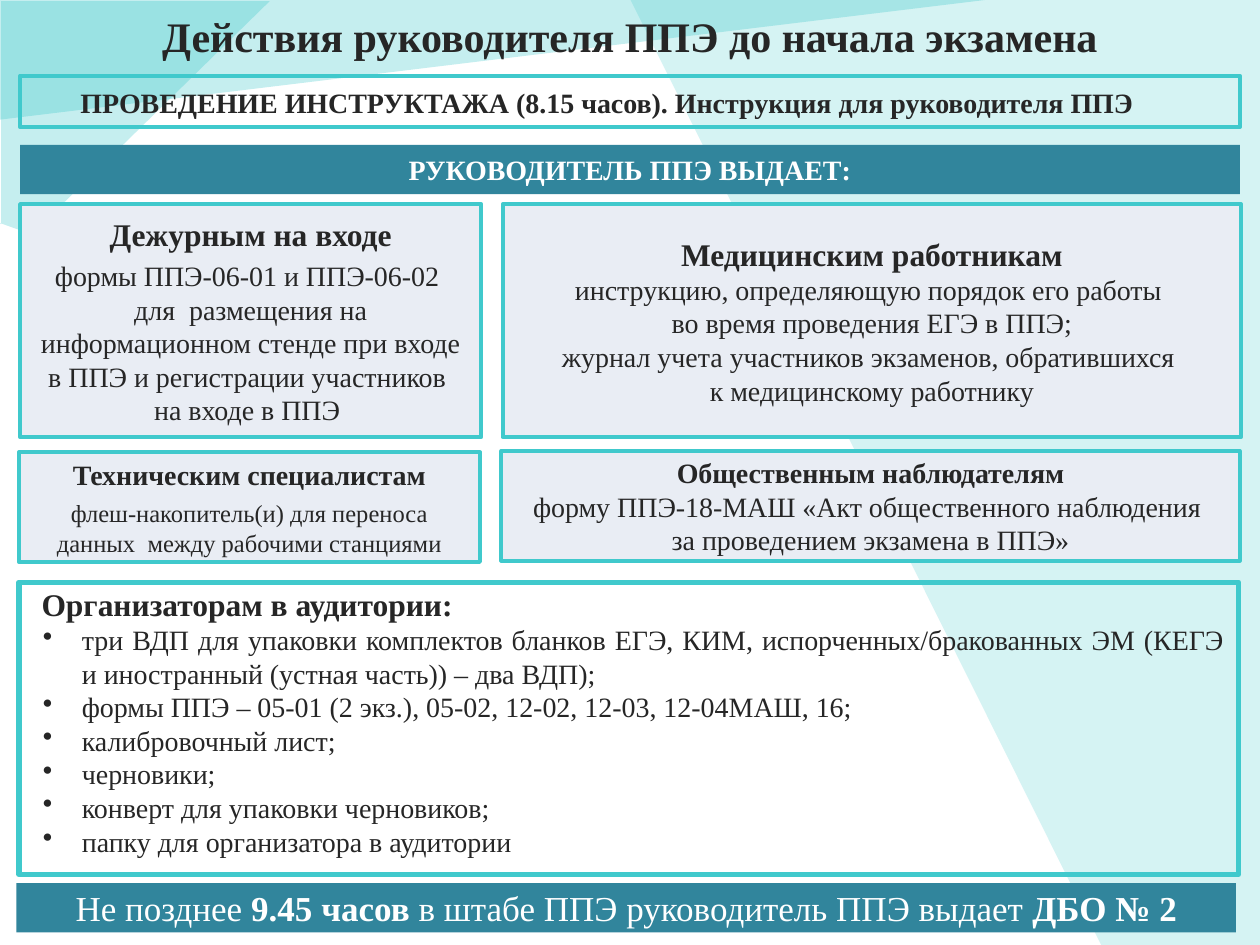
from copy import deepcopy
from lxml.etree import SubElement
from pptx import Presentation
from pptx.dml.color import RGBColor
from pptx.enum.shapes import MSO_SHAPE
from pptx.enum.text import MSO_ANCHOR, MSO_AUTO_SIZE, PP_ALIGN
from pptx.oxml.ns import qn
from pptx.util import Pt

PX = 9144
FONT = "Times New Roman"
INK, WHITE = "262626", "FFFFFF"
TEAL, AQUA, MIST, BAR = "20C0C4", "40C9CC", "E9EDF4", "31859C"


def px(*nums):
    return [n * PX for n in nums]


def paint(color, code):
    color.rgb = RGBColor.from_string(code)


def say(frame, text, size=16, bold=False, color=INK, align=PP_ALIGN.CENTER,
        before=0, left=0, hang=0, bullet=False):
    para = frame.paragraphs[0]
    if para.runs:
        para = frame.add_paragraph()
    para.alignment = align
    para.space_before = Pt(before)
    props = para._p.get_or_add_pPr()
    props.set("marL", str(left * PX))
    props.set("indent", str(hang * PX))
    if bullet:
        SubElement(props, qn("a:buChar")).set("char", "•")
    else:
        SubElement(props, qn("a:buNone"))
    for turn, part in enumerate(text.split("**")):
        for row, line in enumerate(part.split("\n")):
            if row:
                para.add_line_break()
            if line:
                run = para.add_run()
                run.text = line
                run.font.name = FONT
                run.font.size = Pt(size)
                run.font.bold = bold or turn % 2 == 1
                paint(run.font.color, color)
    for gap in para._p.findall(qn("a:br")):
        gap.append(deepcopy(para.runs[0]._r.rPr))


def facet(slide, alpha, points):
    pen = slide.shapes.build_freeform(*points[0], scale=PX)
    pen.add_line_segments(points[1:], close=True)
    shape = pen.convert_to_shape()
    shape.shadow.inherit = False
    shape.fill.solid()
    paint(shape.fill.fore_color, TEAL)
    tint = shape.fill._xPr.find(".//" + qn("a:srgbClr"))
    SubElement(tint, qn("a:alpha")).set("val", str(alpha * 1000))
    shape.line.fill.background()


def box(slide, place, fill=None, line=None, width=2.25):
    shape = slide.shapes.add_shape(MSO_SHAPE.RECTANGLE, *px(*place))
    shape.shadow.inherit = False
    if fill:
        shape.fill.solid()
        paint(shape.fill.fore_color, fill)
    else:
        shape.fill.background()
    if line:
        paint(shape.line.color, line)
        shape.line.width = Pt(width)
    else:
        shape.line.fill.background()
    frame = shape.text_frame
    frame.word_wrap = True
    frame.vertical_anchor = MSO_ANCHOR.MIDDLE
    return frame


def bar(slide, place, text, **form):
    say(box(slide, place, BAR), text, color=WHITE, before=3.9, **form)


def card(slide, place, head, body, size=18, small=16, before=(0, 0)):
    frame = box(slide, place, MIST, AQUA)
    say(frame, head, size=size, bold=True, before=before[0])
    for text in body:
        say(frame, text, size=small, before=before[1])


def label(slide, place):
    frame = slide.shapes.add_textbox(*px(*place)).text_frame
    frame.word_wrap = True
    frame.auto_size = MSO_AUTO_SIZE.SHAPE_TO_FIT_TEXT
    return frame


def title(slide, place, text):
    shape = slide.shapes.title
    shape.left, shape.top, shape.width, shape.height = px(*place)
    frame = shape.text_frame
    frame.vertical_anchor = MSO_ANCHOR.MIDDLE
    frame.auto_size = MSO_AUTO_SIZE.NONE
    say(frame, text, size=24, bold=True)
    slide.shapes.element.append(shape.element)


def rooms(slide):
    box(slide, (15, 462, 968, 232), line=AQUA, width=3)
    frame = label(slide, (32, 462, 940, 220))
    frame.vertical_anchor = MSO_ANCHOR.MIDDLE
    frame.margin_left = frame.margin_right = frame.margin_bottom = 0
    frame.margin_top = PX
    say(frame, "Организаторам в аудитории:", size=18, bold=True,
        align=PP_ALIGN.JUSTIFY, left=1)
    for item in (
        "три ВДП для упаковки комплектов бланков ЕГЭ, КИМ, "
        "испорченных/бракованных ЭМ (КЕГЭ и иностранный (устная часть)) – два ВДП);",
        "формы ППЭ – 05-01 (2 экз.), 05-02, 12-02, 12-03, 12-04МАШ, 16;",
        "калибровочный лист;",
        "черновики;",
        "конверт для упаковки черновиков;",
        "папку для организатора в аудитории",
    ):
        say(frame, item, align=PP_ALIGN.JUSTIFY, left=33, hang=-31, bullet=True)


def main():
    deck = Presentation()
    deck.slide_width, deck.slide_height = px(1000, 750)
    slide = deck.slides.add_slide(deck.slide_layouts[5])

    facet(slide, 19, [(1004, 750), (874, 750), (500, -1), (1004, -1)])
    facet(slide, 26, [(782, 0), (0, 95), (0, -1)])
    facet(slide, 26, [(0, 177), (25, 186), (214, 1), (1, 1), (1, 178)])
    title(slide, (10, -19, 980, 95), "Действия руководителя ППЭ до начала экзамена")
    rooms(slide)

    bar(slide, (16, 115, 968, 39), "РУКОВОДИТЕЛЬ ППЭ ВЫДАЕТ:", bold=True)
    card(slide, (16, 162, 366, 185), "Дежурным на входе", [
        "формы ППЭ-06-01 и ППЭ-06-02 \nдля  размещения на информационном стенде "
        "при входе в ППЭ и регистрации участников \nна входе в ППЭ "],
        before=(4.4, 3.4))
    card(slide, (399, 162, 586, 185), "Медицинским работникам", [
        "инструкцию, определяющую порядок его работы \n"
        "во время проведения ЕГЭ в ППЭ;",
        "журнал учета участников экзаменов, обратившихся \n"
        "к медицинскому работнику"])
    card(slide, (15, 359, 366, 87), "Техническим специалистам", [
        "флеш-накопитель(и) для переноса данных  между рабочими станциями"],
        size=16, small=14, before=(4.4, 4.4))
    card(slide, (398, 358, 586, 87), "Общественным наблюдателям", [
        "форму ППЭ-18-МАШ «Акт общественного наблюдения \n"
        "за проведением экзамена в ППЭ»"], size=16)

    box(slide, (16, 60, 968, 41), line=AQUA)
    say(label(slide, (54, 63, 881, 37)),
        "ПРОВЕДЕНИЕ ИНСТРУКТАЖА (8.15 часов). Инструкция для руководителя ППЭ",
        bold=True, align=PP_ALIGN.LEFT)
    bar(slide, (13, 701, 968, 39),
        "Не позднее **9.45 часов** в штабе ППЭ руководитель ППЭ выдает **ДБО № 2**",
        size=20)
    deck.save("out.pptx")


if __name__ == "__main__":
    main()
